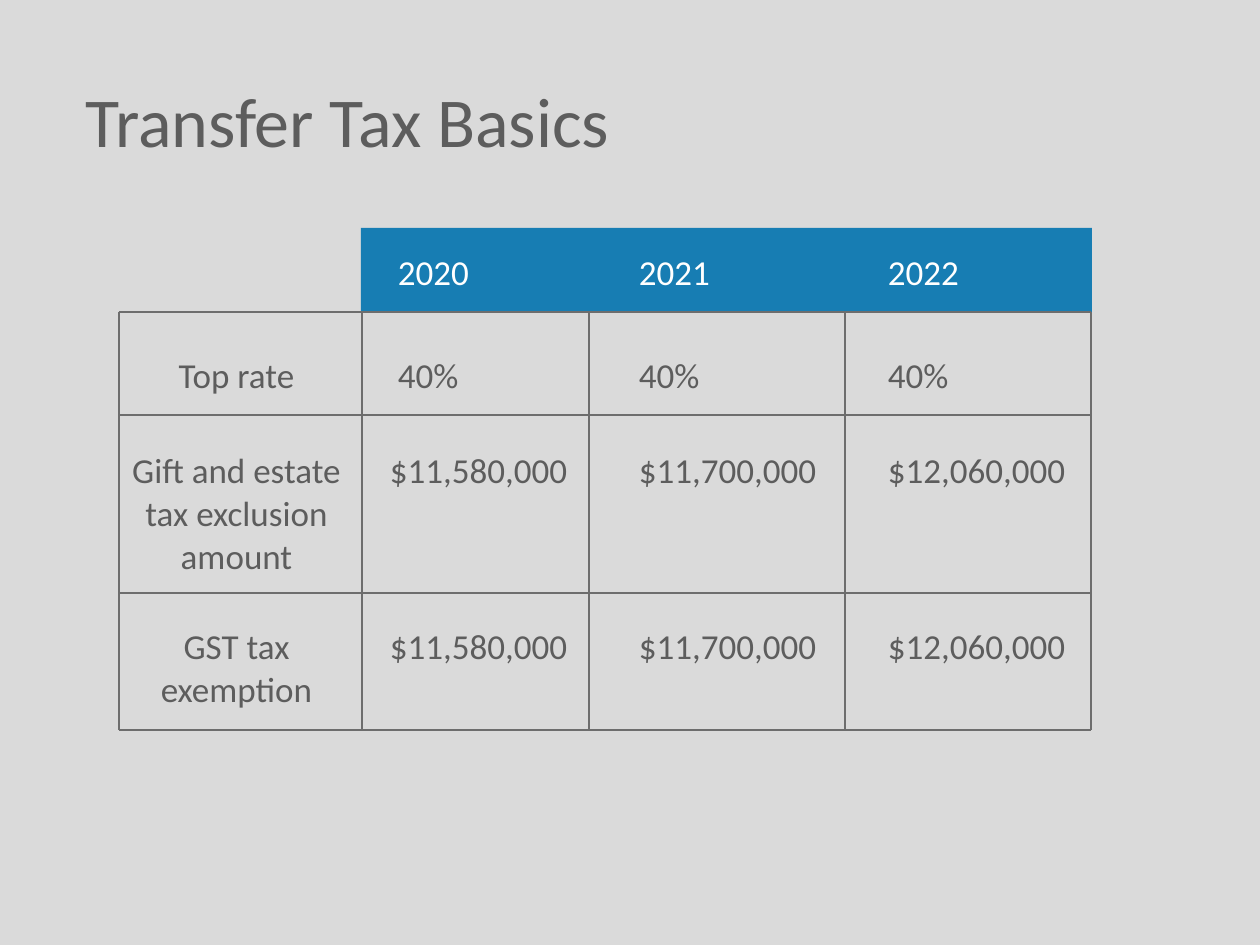
from lxml.etree import SubElement
from pptx import Presentation
from pptx.dml.color import RGBColor
from pptx.enum.shapes import MSO_CONNECTOR as Connector, MSO_SHAPE as Shape
from pptx.enum.text import MSO_ANCHOR as Anchor, PP_ALIGN as Align
from pptx.oxml.ns import qn
from pptx.util import Inches, Pt

PX = 7257
GREY, WHITE, BLUE, RULE = "5D5D5D", "FFFFFF", "177DB3", "6D6D6D"
NO_STYLE = "{2D5ABB26-0587-4C30-8999-92F81FD0307C}"


def color(target, value):
    target.rgb = RGBColor.from_string(value)


def write(frame, text, size=20, fill=GREY, align=Align.LEFT):
    frame.word_wrap = True
    paragraph = frame.paragraphs[0]
    paragraph.alignment = align
    run = paragraph.add_run()
    run.text = text
    run.font.name = "Calibri"
    run.font.size = Pt(size)
    run.font.bold = False
    color(run.font.color, fill)


presentation = Presentation()
presentation.slide_width, presentation.slide_height = Inches(10), Inches(7.5)
slide = presentation.slides.add_slide(presentation.slide_layouts[5])
background = slide.background.fill
background.solid()
color(background.fore_color, "DADADA")

title = slide.shapes.title
title.left, title.top, title.width, title.height = 73 * PX, 73 * PX, 925 * PX, 93 * PX
title.text_frame.vertical_anchor = Anchor.MIDDLE
write(title.text_frame, "Transfer Tax Basics", size=40)

header = slide.shapes.add_shape(Shape.RECTANGLE, 361 * PX, 228 * PX, 731 * PX, 84 * PX)
header.shadow.inherit = False
header.fill.solid()
color(header.fill.fore_color, BLUE)
header.line.fill.background()

rows = [
    ["", "2020", "2021", "2022"],
    ["Top rate", "40%", "40%", "40%"],
    ["Gift and estate tax exclusion amount", "$11,580,000", "$11,700,000", "$12,060,000"],
    ["GST tax exemption", "$11,580,000", "$11,700,000", "$12,060,000"],
]
column_widths = [251, 249, 249, 248]
row_heights = [103, 95, 176, 164]
table_frame = slide.shapes.add_table(
    len(rows), len(column_widths), 111 * PX, 246 * PX, sum(column_widths) * PX, sum(row_heights) * PX
)
table = table_frame.table
table.first_row = table.horz_banding = False
table._tbl.tblPr.find(qn("a:tableStyleId")).text = NO_STYLE
for column, width in zip(table.columns, column_widths):
    column.width = width * PX
for row, height in zip(table.rows, row_heights):
    row.height = height * PX

for row_index, labels in enumerate(rows):
    for column_index, label in enumerate(labels):
        cell = table.cell(row_index, column_index)
        cell.fill.background()
        if not label:
            continue
        if column_index:
            cell.margin_left = (36 if column_index == 1 and row_index < 2 else 28) * PX
        write(
            cell.text_frame,
            label,
            fill=GREY if row_index else WHITE,
            align=Align.LEFT if column_index else Align.CENTER,
        )

column_edges = [119, 362, 589, 845, 1091]
row_edges = [312, 415, 593, 730]
left, right = column_edges[0], column_edges[-1]
top, bottom = row_edges[0], row_edges[-1]
rules = [(x, top, x, bottom) for x in column_edges] + [(left, y, right, y) for y in row_edges]
for points in rules:
    rule = slide.shapes.add_connector(Connector.STRAIGHT, *[point * PX for point in points])
    rule.line.width = Pt(1.5)
    color(rule.line.color, RULE)
    SubElement(rule._element.spPr, qn("a:effectLst"))

presentation.save("out.pptx")
